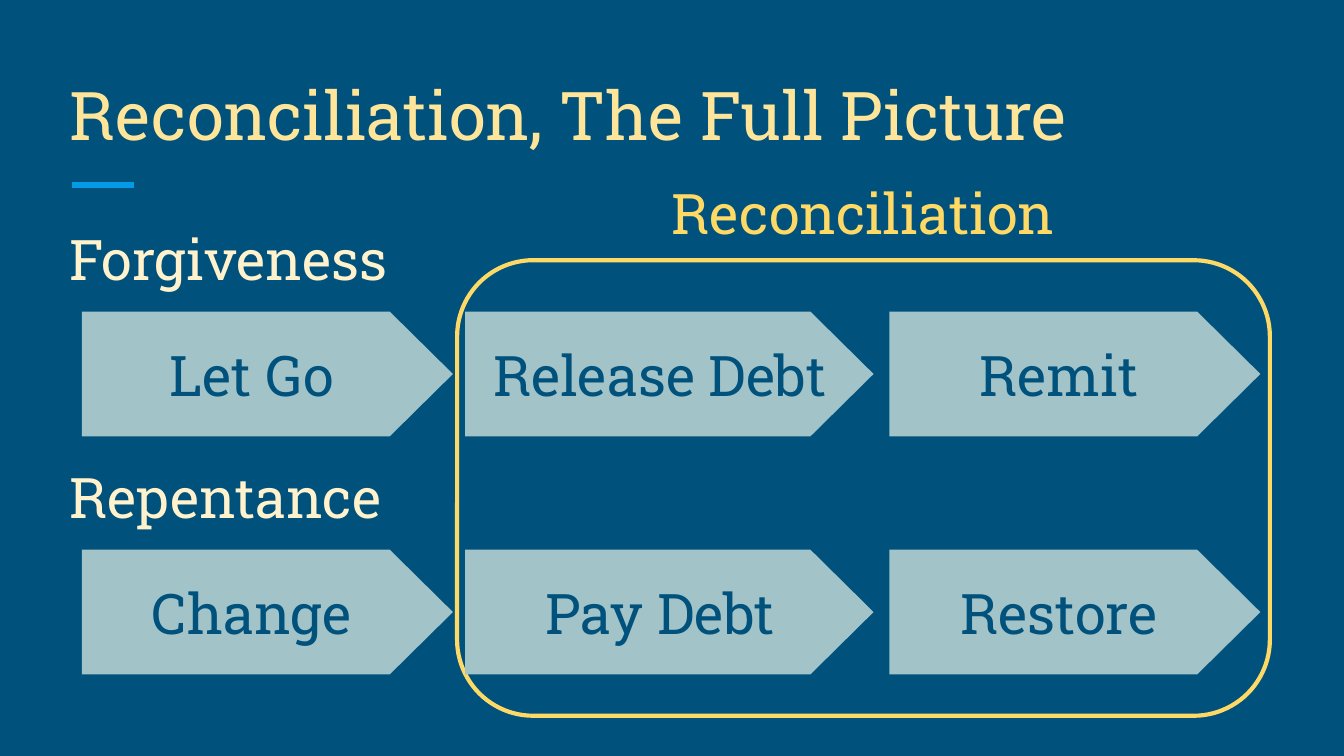
from dataclasses import dataclass

from lxml import etree
from pptx import Presentation
from pptx.dml.color import RGBColor as Color
from pptx.enum.shapes import MSO_CONNECTOR as Connector, MSO_SHAPE as Preset
from pptx.enum.text import MSO_ANCHOR as Anchor, MSO_AUTO_SIZE as AutoSize, PP_ALIGN as Align
from pptx.oxml.ns import qn
from pptx.util import Cm, Pt


@dataclass(frozen=True)
class Theme:
    font: str = "Roboto Slab"
    title_size: int = 36
    text_size: int = 30
    background: str = "00517C"
    accent: str = "039BE5"
    title: str = "FFE599"
    heading: str = "FFF2CC"
    frame: str = "FFD966"
    arrow: str = "A2C4C9"


theme = Theme()


def write_text(shape, text, size=theme.text_size, color=theme.heading,
               align=Align.LEFT, anchor=Anchor.BOTTOM, nudge=0):
    box = shape.text_frame
    box.word_wrap = True
    box.auto_size = AutoSize.NONE
    box.vertical_anchor = anchor
    box.margin_top = box.margin_bottom = Cm(0.25)
    box.margin_left, box.margin_right = Cm(0.25 + nudge), Cm(0.25 - nudge)
    para = box.paragraphs[0]
    para.alignment = align
    span = para.add_run()
    span.text = text
    span.font.name = theme.font
    span.font.size = Pt(size)
    span.font.color.rgb = Color.from_string(color)


deck = Presentation()
deck.slide_width, deck.slide_height = Cm(25.4), Cm(14.29)
page = deck.slides.add_slide(deck.slide_layouts[5])
page.background.fill.solid()
page.background.fill.fore_color.rgb = Color.from_string(theme.background)

title = page.shapes.title
title.left, title.top, title.width, title.height = Cm(1.07), Cm(1.27), Cm(23.24), Cm(1.9)
write_text(title, "Reconciliation, The Full Picture", size=theme.title_size, color=theme.title)

rule = page.shapes.add_connector(Connector.STRAIGHT, Cm(1.37), Cm(3.5), Cm(2.54), Cm(3.5))
rule.line.color.rgb = Color.from_string(theme.accent)
rule.line.width = Pt(3)
etree.SubElement(rule.element.spPr, qn("a:effectLst"))

frame = page.shapes.add_shape(Preset.ROUNDED_RECTANGLE, Cm(8.64), Cm(4.92), Cm(15.36), Cm(8.61))
frame.adjustments[0] = 0.167
frame.shadow.inherit = False
frame.fill.background()
frame.line.color.rgb = Color.from_string(theme.frame)
frame.line.width = Pt(2.25)

columns = [(1.55, 7.01, 0), (8.79, 7.72, 0.12), (16.81, 7.01, 0)]
rows = [
    ("Forgiveness", 3.86, ["Let Go", "Release Debt", "Remit"]),
    ("Repentance", 8.36, ["Change", "Pay Debt", "Restore"]),
]
for heading, top, steps in rows:
    label = page.shapes.add_textbox(Cm(1.07), Cm(top), Cm(23.24), Cm(1.9))
    write_text(label, heading)
    group = page.shapes.add_group_shape()
    for step, (left, width, nudge) in zip(steps, columns):
        arrow = group.shapes.add_shape(
            Preset.PENTAGON, Cm(left), Cm(top + 2.03), Cm(width), Cm(2.36))
        arrow.adjustments[0] = 0.506
        arrow.shadow.inherit = False
        arrow.fill.solid()
        arrow.fill.fore_color.rgb = Color.from_string(theme.arrow)
        arrow.line.fill.background()
        write_text(arrow, step, color=theme.background, align=Align.CENTER,
                   anchor=Anchor.MIDDLE, nudge=nudge)

caption = page.shapes.add_textbox(Cm(11.4), Cm(3.12), Cm(9.83), Cm(1.8))
write_text(caption, "Reconciliation", color=theme.frame, align=Align.CENTER, anchor=Anchor.TOP)

deck.save("out.pptx")
